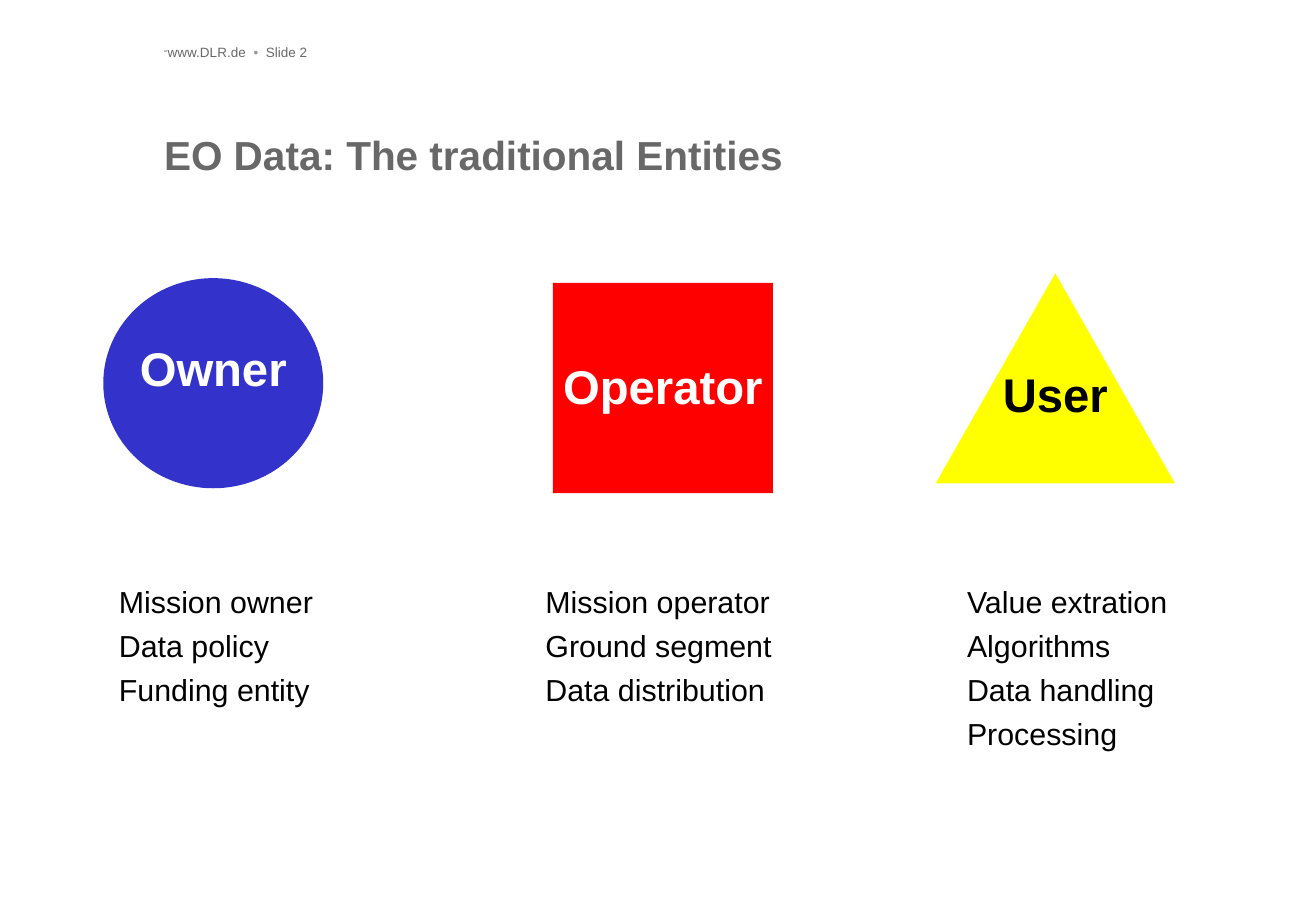
from dataclasses import dataclass

from pptx import Presentation
from pptx.dml.color import RGBColor
from pptx.enum.shapes import MSO_SHAPE
from pptx.enum.text import MSO_ANCHOR, MSO_AUTO_SIZE, PP_ALIGN
from pptx.oxml.xmlchemy import OxmlElement
from pptx.util import Inches, Pt


@dataclass(frozen=True)
class Theme:
    """Colours, font and type sizes of the slide."""
    font: str = "Arial"
    grey: str = "686868"
    light_grey: str = "949494"
    white: str = "FFFFFF"
    black: str = "000000"
    blue: str = "3333CC"
    red: str = "FF0000"
    yellow: str = "FFFF00"
    title_size: int = 24
    header_size: int = 8
    entity_size: int = 28
    duty_size: int = 18
    line_pitch: int = 26


THEME = Theme()

ENTITIES = [
    ("Owner", MSO_SHAPE.OVAL, (0.85, 2.29, 1.81, 1.73), THEME.blue, THEME.white, 0.36,
     (0.88, 4.69, 1.81, 1.19), ["Mission owner", "Data policy", "Funding entity"]),
    ("Operator", MSO_SHAPE.RECTANGLE, (4.55, 2.33, 1.81, 1.73), THEME.red, THEME.white, 0.72,
     (4.39, 4.69, 2.12, 1.19), ["Mission operator", "Ground segment", "Data distribution"]),
    ("User", MSO_SHAPE.ISOSCELES_TRIANGLE, (7.7, 2.25, 1.97, 1.73), THEME.yellow, THEME.black, 0,
     (7.86, 4.69, 1.87, 1.92),
     ["Value extration", "Algorithms", "Data handling", "Processing"]),
]


def write(paragraph, text, size, color, bold=False, align=PP_ALIGN.LEFT, pitch=None):
    """Add a formatted run to a paragraph."""
    paragraph.alignment = align
    if pitch:
        paragraph.line_spacing = Pt(pitch)
    run = paragraph.add_run()
    run.text = text
    run.font.name = THEME.font
    run.font.size = Pt(size)
    run.font.bold = bold
    run.font.color.rgb = RGBColor.from_string(color)


def set_frame(frame, top=0):
    """Anchor a text frame at the top and clear its other margins."""
    frame.word_wrap = True
    frame.vertical_anchor = MSO_ANCHOR.TOP
    frame.margin_left = frame.margin_right = frame.margin_bottom = 0
    frame.margin_top = Inches(top)


def add_title(slide, text):
    """Place and fill the title placeholder."""
    title = slide.shapes.title
    title.left, title.top = Inches(1.35), Inches(1.03)
    title.width, title.height = Inches(8.7), Inches(0.81)
    set_frame(title.text_frame, top=0.04)
    write(title.text_frame.paragraphs[0], text, THEME.title_size, THEME.grey, bold=True)


def add_header(slide):
    """Add the web address and slide number with a small dash bullet."""
    header = slide.shapes.add_textbox(Inches(1.35), Inches(0.36), Inches(1.46), Inches(0.13))
    set_frame(header.text_frame)
    line = header.text_frame.paragraphs[0]
    properties = line._p.get_or_add_pPr()
    properties.set("marL", str(Inches(0.03)))
    properties.set("indent", str(-Inches(0.03)))
    for tag, name, value in [("a:buSzPct", "val", "75000"), ("a:buChar", "char", "-")]:
        bullet = OxmlElement(tag)
        bullet.set(name, value)
        properties.append(bullet)
    for text, color in [("www.DLR.de  ", THEME.grey), ("•", THEME.light_grey),
                        ("  Slide 2", THEME.grey)]:
        write(line, text, THEME.header_size, color)


def add_entity(slide, name, outline, box, fill, color, label_top):
    """Add a filled shape that carries the name of an entity."""
    entity = slide.shapes.add_shape(outline, *map(Inches, box))
    entity.shadow.inherit = False
    entity.fill.solid()
    entity.fill.fore_color.rgb = RGBColor.from_string(fill)
    entity.line.fill.background()
    set_frame(entity.text_frame, top=label_top)
    write(entity.text_frame.paragraphs[0], name, THEME.entity_size, color, bold=True,
          align=PP_ALIGN.CENTER, pitch=THEME.line_pitch)


def add_duties(slide, box, duties):
    """List the duties of an entity, one to a paragraph."""
    frame = slide.shapes.add_textbox(*map(Inches, box)).text_frame
    frame.word_wrap = False
    frame.auto_size = MSO_AUTO_SIZE.SHAPE_TO_FIT_TEXT
    for index, duty in enumerate(duties):
        paragraph = frame.add_paragraph() if index else frame.paragraphs[0]
        write(paragraph, duty, THEME.duty_size, THEME.black, pitch=THEME.line_pitch)


def main():
    """Build the slide and save it."""
    deck = Presentation()
    deck.slide_width, deck.slide_height = Inches(10.83), Inches(7.5)
    slide = deck.slides.add_slide(deck.slide_layouts.get_by_name("Title Only"))
    add_title(slide, "EO Data: The traditional Entities")
    add_header(slide)
    for name, outline, box, fill, color, label_top, duties_box, duties in ENTITIES:
        add_entity(slide, name, outline, box, fill, color, label_top)
        add_duties(slide, duties_box, duties)
    deck.save("out.pptx")


if __name__ == "__main__":
    main()
